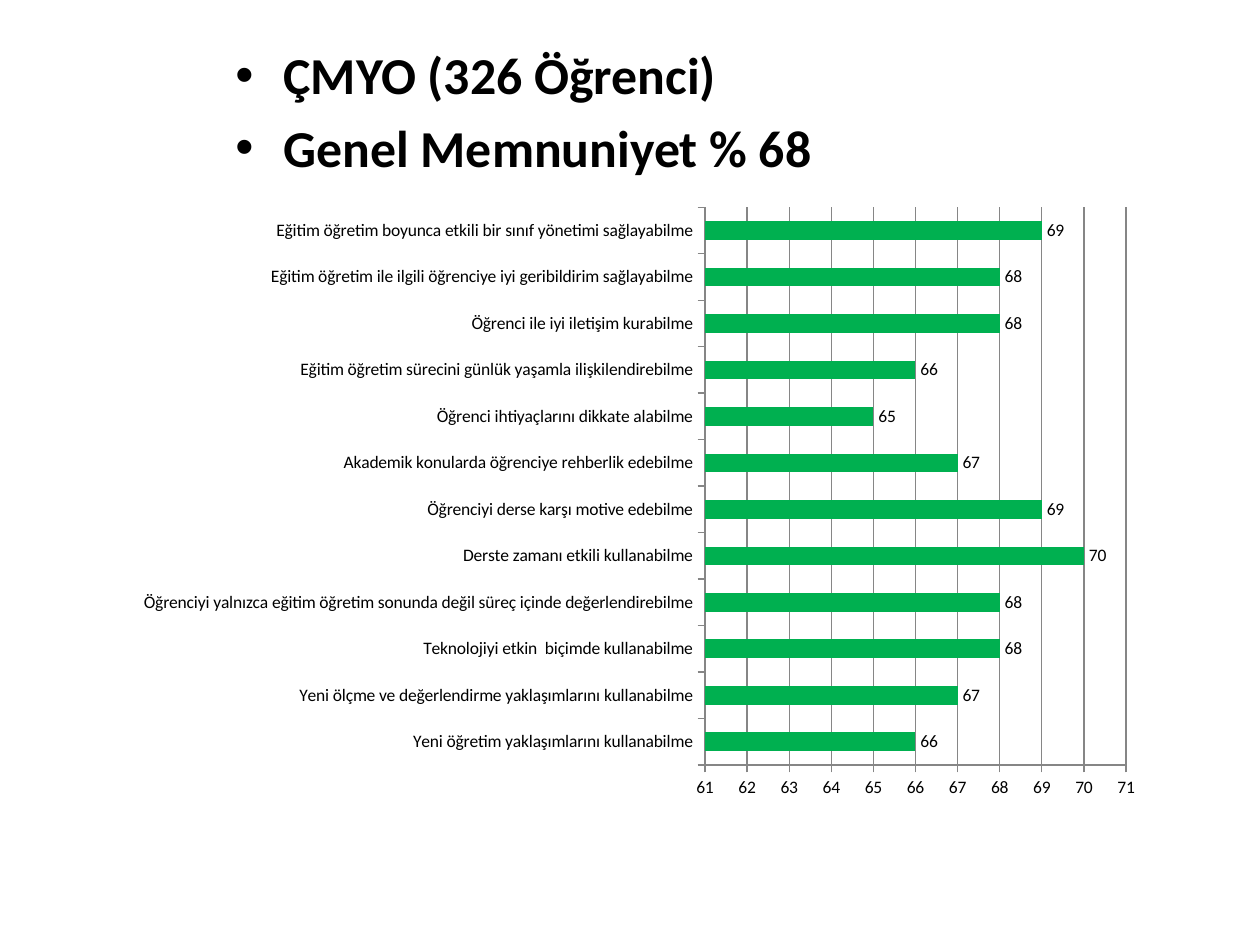
from lxml import etree
from pptx import Presentation
from pptx.chart.data import CategoryChartData
from pptx.dml.color import RGBColor
from pptx.enum.chart import XL_CHART_TYPE, XL_LABEL_POSITION, XL_TICK_MARK
from pptx.oxml import parse_xml
from pptx.oxml.ns import nsdecls, qn
from pptx.util import Pt

BAR_CLUSTERED = XL_CHART_TYPE.BAR_CLUSTERED
OUTSIDE_END = XL_LABEL_POSITION.OUTSIDE_END
TICK_OUT = XL_TICK_MARK.OUTSIDE

BLACK = RGBColor(0x00, 0x00, 0x00)
GREEN = RGBColor(0x00, 0xB0, 0x50)
GRAY = RGBColor(0x86, 0x86, 0x86)
FONT = "Calibri"

HEADINGS = ["ÇMYO (326 Öğrenci)", "Genel Memnuniyet % 68"]
SATISFACTION = [
    ("Yeni öğretim yaklaşımlarını kullanabilme", 66),
    ("Yeni ölçme ve değerlendirme yaklaşımlarını kullanabilme", 67),
    ("Teknolojiyi etkin  biçimde kullanabilme", 68),
    ("Öğrenciyi yalnızca eğitim öğretim sonunda değil süreç içinde değerlendirebilme", 68),
    ("Derste zamanı etkili kullanabilme", 70),
    ("Öğrenciyi derse karşı motive edebilme", 69),
    ("Akademik konularda öğrenciye rehberlik edebilme", 67),
    ("Öğrenci ihtiyaçlarını dikkate alabilme", 65),
    ("Eğitim öğretim sürecini günlük yaşamla ilişkilendirebilme", 66),
    ("Öğrenci ile iyi iletişim kurabilme", 68),
    ("Eğitim öğretim ile ilgili öğrenciye iyi geribildirim sağlayabilme", 68),
    ("Eğitim öğretim boyunca etkili bir sınıf yönetimi sağlayabilme", 69),
]

HEADING_BOX = (223, 37, 824, 149)
CHART_BOX = (123, 195, 1032, 615)
PLOT_BOX = (705, 207, 421, 558)
BULLET_INDENT = 48


def px(n):
    return round(n * 914400 / 126)


def add_headings(slide):
    tf = slide.shapes.add_textbox(*map(px, HEADING_BOX)).text_frame
    tf.word_wrap = True
    for i, text in enumerate(HEADINGS):
        p = tf.add_paragraph() if i else tf.paragraphs[0]
        p.space_before = Pt(6)
        pPr = p._p.get_or_add_pPr()
        pPr.set("marL", str(px(BULLET_INDENT)))
        pPr.set("indent", str(-px(BULLET_INDENT)))
        etree.SubElement(pPr, qn("a:buFont"), typeface="Arial")
        etree.SubElement(pPr, qn("a:buChar"), char="•")
        r = p.add_run()
        r.text = text
        r.font.name = FONT
        r.font.size = Pt(29.6)
        r.font.bold = True
        r.font.color.rgb = BLACK


def set_plot_area(chart):
    left, top, width, height = CHART_BOX
    x, y, w, h = PLOT_BOX
    places = {"x": (x - left) / width, "y": (y - top) / height,
              "w": w / width, "h": h / height}
    modes = '<c:layoutTarget val="inner"/><c:xMode val="edge"/><c:yMode val="edge"/>'
    values = "".join(f'<c:{k} val="{v:.3f}"/>' for k, v in places.items())
    layout = parse_xml(f'<c:layout {nsdecls("c")}><c:manualLayout>'
                       f'{modes}{values}</c:manualLayout></c:layout>')
    plot_area = chart._chartSpace.chart.plotArea
    for old in plot_area.findall(qn("c:layout")):
        plot_area.remove(old)
    plot_area.insert(0, layout)


def add_satisfaction_chart(slide):
    data = CategoryChartData(number_format="0")
    data.categories = [name for name, _ in SATISFACTION]
    data.add_series("Series 1", [value for _, value in SATISFACTION])
    chart = slide.shapes.add_chart(BAR_CLUSTERED, *map(px, CHART_BOX), data).chart
    chart.has_title = False
    chart.has_legend = False
    chart.font.name = FONT
    chart.font.size = Pt(10)
    chart.font.color.rgb = BLACK

    plot = chart.plots[0]
    plot.gap_width = 150
    plot.vary_by_categories = False
    fill = plot.series[0].format.fill
    fill.solid()
    fill.fore_color.rgb = GREEN
    plot.has_data_labels = True
    labels = plot.data_labels
    labels.show_value = True
    labels.number_format = "0"
    labels.number_format_is_linked = False
    labels.position = OUTSIDE_END

    values = chart.value_axis
    values.minimum_scale, values.maximum_scale, values.major_unit = 61, 71, 1
    values.has_major_gridlines = True
    values.tick_labels.number_format = "0"
    values.tick_labels.number_format_is_linked = False
    for axis in (chart.category_axis, values):
        axis.major_tick_mark = TICK_OUT
    for part in (chart.category_axis, values, values.major_gridlines):
        part.format.line.color.rgb = GRAY
        part.format.line.width = Pt(0.75)
    set_plot_area(chart)


def main():
    prs = Presentation()
    prs.slide_width, prs.slide_height = px(1260), px(945)
    slide = prs.slides.add_slide(prs.slide_layouts[6])
    add_headings(slide)
    add_satisfaction_chart(slide)
    prs.save("out.pptx")


if __name__ == "__main__":
    main()
